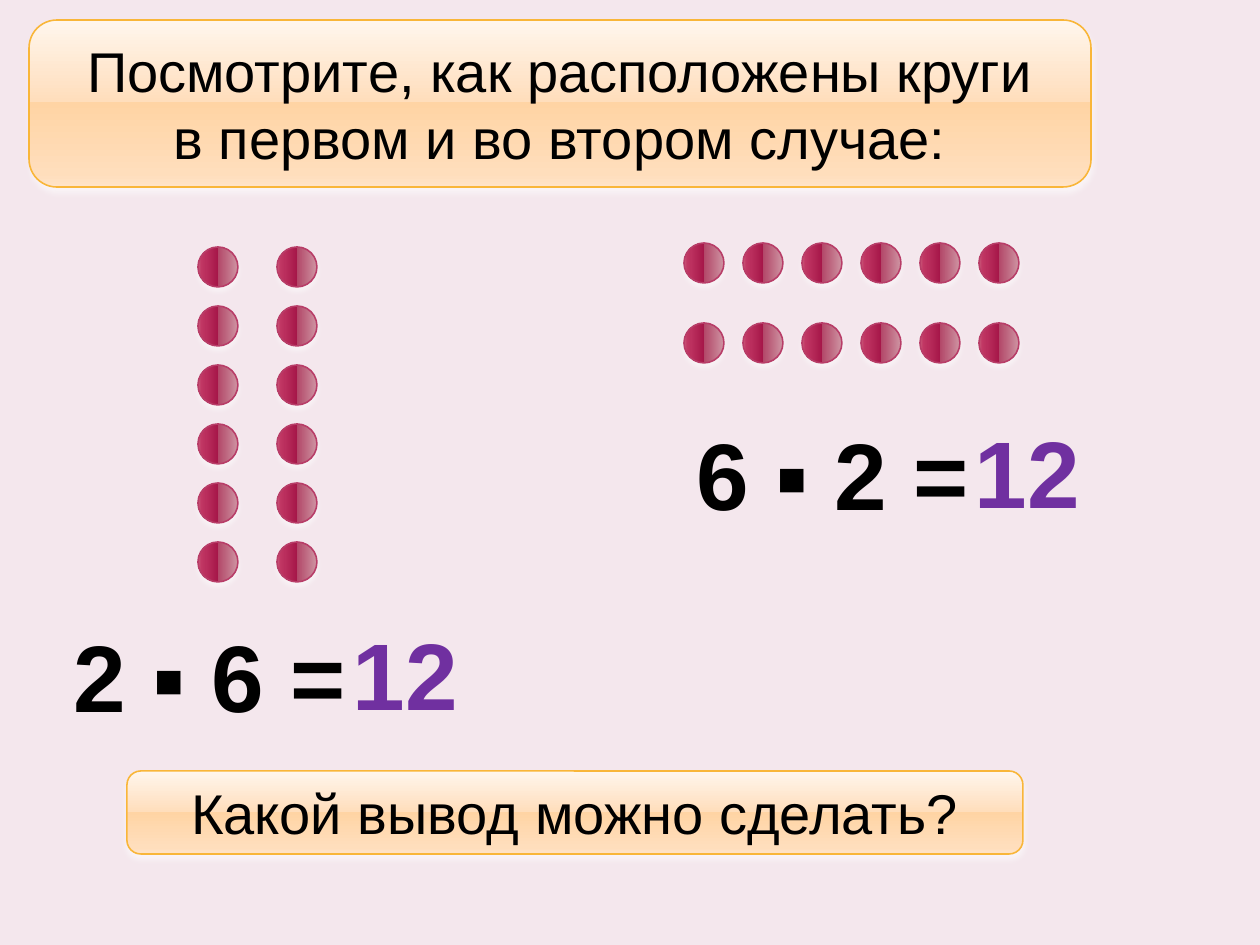
import pptx
import pptx.dml.color
import pptx.enum.shapes
import pptx.enum.text
import pptx.oxml
import pptx.oxml.ns
import pptx.util

SCALE = 914400 / 126
COLORS = {
    "page": "F4E7ED",
    "text": "000000",
    "answer": "7030A0",
    "circle_line": "B83D68",
    "panel_line": "F9B639",
    "shadow": "FFFFFF",
}
CIRCLE_STOPS = [(0, "CE94A2"), (49, "B34869"), (49, "A61749"), (92, "C13764"), (100, "CA5D7C")]
PANEL_STOPS = [(0, "FFF6ED"), (49, "FFDEBC"), (49, "FFD4A4"), (92, "FFDEBC"), (100, "FFE3C7")]
SHAPES = pptx.enum.shapes.MSO_SHAPE
ALIGN = pptx.enum.text.PP_ALIGN
ANCHOR = pptx.enum.text.MSO_ANCHOR


def add_glossy_shape(kind, area, stops, angle, line):
    shape = page.shapes.add_shape(kind, *[round(n * SCALE) for n in area])
    namespace = pptx.oxml.ns.nsdecls("a")
    stop_xml = "".join(
        f'<a:gs pos="{position * 1000}"><a:srgbClr val="{color}"/></a:gs>'
        for position, color in stops
    )
    properties = shape._element.spPr
    properties.append(pptx.oxml.parse_xml(
        f'<a:gradFill {namespace} rotWithShape="1"><a:gsLst>{stop_xml}</a:gsLst>'
        f'<a:lin ang="{angle * 60000}" scaled="0"/></a:gradFill>'
    ))
    shape.line.color.rgb = pptx.dml.color.RGBColor.from_string(COLORS[line])
    shape.line.width = pptx.util.Pt(0.9)
    properties.append(pptx.oxml.parse_xml(
        f'<a:effectLst {namespace}><a:outerShdw blurRad="44450" dist="25400" dir="5400000" '
        f'algn="ctr" rotWithShape="0"><a:srgbClr val="{COLORS["shadow"]}">'
        f'<a:alpha val="60000"/></a:srgbClr></a:outerShdw></a:effectLst>'
    ))
    return shape


def write_text(box, lines, size, color, align, bold=False):
    frame = box.text_frame
    frame.word_wrap = True
    for index, line in enumerate(lines):
        para = frame.add_paragraph() if index else frame.paragraphs[0]
        para.alignment = align
        para.line_spacing = 1.0
        para.space_before = pptx.util.Pt(0)
        span = para.add_run()
        span.text = line
        span.font.name = "Arial"
        span.font.size = pptx.util.Pt(size)
        span.font.bold = bold
        span.font.color.rgb = pptx.dml.color.RGBColor.from_string(COLORS[color])


deck = pptx.Presentation()
deck.slide_width = round(1260 * SCALE)
deck.slide_height = round(945 * SCALE)
page = deck.slides.add_slide(deck.slide_layouts[5])
page.background.fill.solid()
page.background.fill.fore_color.rgb = pptx.dml.color.RGBColor.from_string(COLORS["page"])

circle_groups = [
    {"left": 684, "top": 243, "columns": 6, "rows": 2, "step_x": 59, "step_y": 80},
    {"left": 198, "top": 247, "columns": 2, "rows": 6, "step_x": 79, "step_y": 59},
]
for group in circle_groups:
    for row in range(group["rows"]):
        for column in range(group["columns"]):
            left = group["left"] + column * group["step_x"]
            top = group["top"] + row * group["step_y"]
            add_glossy_shape(SHAPES.OVAL, (left, top, 40, 40), CIRCLE_STOPS, 180, "circle_line")

title_area = (29, 20, 1062, 167)
add_glossy_shape(SHAPES.FLOWCHART_ALTERNATE_PROCESS, title_area, PANEL_STOPS, 90, "panel_line")
title = page.shapes.title
title.left, title.top, title.width, title.height = [round(n * SCALE) for n in title_area]
title.text_frame.vertical_anchor = ANCHOR.MIDDLE
title.text_frame.auto_size = pptx.enum.text.MSO_AUTO_SIZE.NONE
write_text(title, ["Посмотрите, как расположены круги", "в первом и во втором случае:"],
           32, "text", ALIGN.CENTER)
page.shapes._spTree.append(title._element)

question = add_glossy_shape(SHAPES.FLOWCHART_ALTERNATE_PROCESS, (127, 771, 896, 83),
                            PANEL_STOPS, 90, "panel_line")
question.text_frame.vertical_anchor = ANCHOR.MIDDLE
write_text(question, ["Какой вывод можно сделать?"], 32, "text", ALIGN.CENTER)

formulas = [
    ("6 ▪ 2 =", (684, 410, 325, 127), "text", ALIGN.LEFT),
    ("2 ▪ 6 =", (61, 612, 325, 127), "text", ALIGN.LEFT),
    ("12", (935, 408, 185, 127), "answer", ALIGN.CENTER),
    ("12", (313, 610, 185, 127), "answer", ALIGN.CENTER),
]
for text, area, color, align in formulas:
    box = page.shapes.add_textbox(*[round(n * SCALE) for n in area])
    write_text(box, [text], 54, color, align, bold=True)

deck.save("out.pptx")
